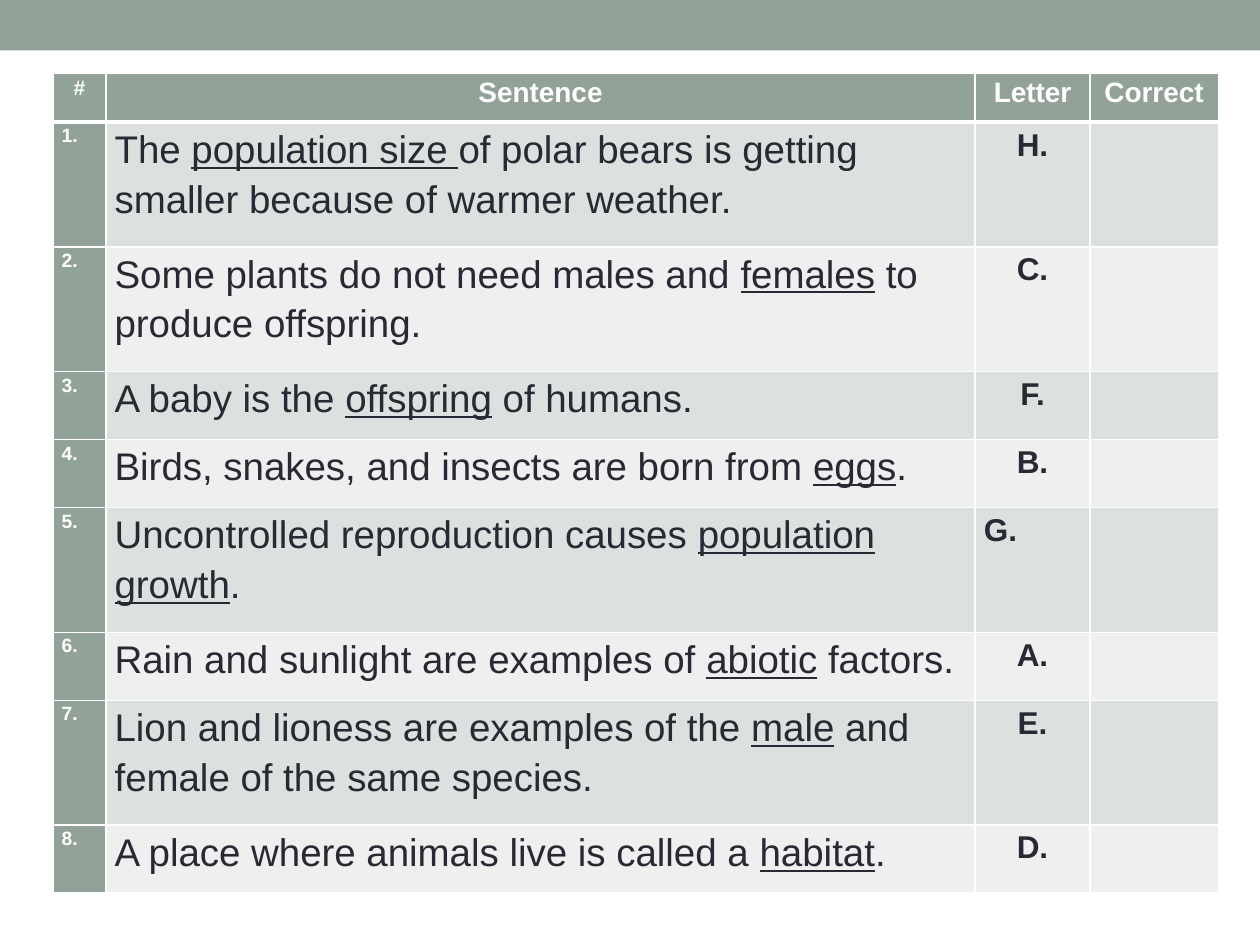
from lxml import etree
from pptx import Presentation
from pptx.dml.color import RGBColor
from pptx.enum.shapes import MSO_SHAPE
from pptx.enum.text import PP_ALIGN
from pptx.oxml.ns import qn
from pptx.util import Inches, Pt

RECTANGLE = MSO_SHAPE.RECTANGLE
LEFT, CENTER, JUSTIFY = PP_ALIGN.LEFT, PP_ALIGN.CENTER, PP_ALIGN.JUSTIFY

SAGE = RGBColor(0x93, 0xA2, 0x99)
BAND_DARK = RGBColor(0xDC, 0xE0, 0xDE)
BAND_LIGHT = RGBColor(0xEE, 0xF0, 0xEF)
INK = RGBColor(0x29, 0x29, 0x34)
WHITE = RGBColor(0xFF, 0xFF, 0xFF)
FONT = "Arial"

HEADINGS = [("#", 12), ("Sentence", 16), ("Letter", 16), ("Correct", 16)]
COLUMN_WIDTHS = [0.42, 6.9, 0.91, 1.02]
HEADER_HEIGHT = 0.39
ONE_LINE, TWO_LINES = 0.54, 0.99

# Text before the key term, key term, text after it, answer letter, row height
SENTENCES = [
    ("The ", "population size ", "of polar bears is getting smaller because of warmer weather.",
     "H.", TWO_LINES),
    ("Some plants do not need males and ", "females", " to produce offspring.", "C.", TWO_LINES),
    ("A baby is the ", "offspring", " of humans.", "F.", ONE_LINE),
    ("Birds, snakes, and insects are born from ", "eggs", ".", "B.", ONE_LINE),
    ("Uncontrolled reproduction causes ", "population growth", ".", "G.", TWO_LINES),
    ("Rain and sunlight are examples of ", "abiotic", " factors.", "A.", ONE_LINE),
    ("Lion and lioness are examples of the ", "male", " and female of the same species.",
     "E.", TWO_LINES),
    ("A place where animals live is called a ", "habitat", ".", "D.", ONE_LINE),
]


def add_banner(page, left, top, width, height):
    banner = page.shapes.add_shape(RECTANGLE, left, top, width, height)
    banner.shadow.inherit = False
    banner.fill.solid()
    banner.fill.fore_color.rgb = SAGE
    banner.line.fill.background()


def style_cell(cell, fill, top=1, bottom=1):
    """Set margins, white borders (widths in points) and fill."""
    cell.margin_left = cell.margin_right = Inches(0.07)
    cell.margin_top = cell.margin_bottom = 0
    properties = cell._tc.get_or_add_tcPr()
    for tag, width in (("a:lnL", 1), ("a:lnR", 1), ("a:lnT", top), ("a:lnB", bottom)):
        line = etree.SubElement(properties, qn(tag), w=str(Pt(width)))
        solid = etree.SubElement(line, qn("a:solidFill"))
        etree.SubElement(solid, qn("a:srgbClr"), val=str(WHITE))
    cell.fill.solid()
    cell.fill.fore_color.rgb = fill


def write_cell(cell, texts, size, color, align, bold=True):
    """Write the texts as runs; every second one is underlined."""
    para = cell.text_frame.paragraphs[0]
    para.alignment = align
    para.line_spacing = 1.15
    para.space_before = para.space_after = Pt(6)
    for index, text in enumerate(texts):
        span = para.add_run()
        span.text = text
        span.font.name = FONT
        span.font.size = Pt(size)
        span.font.bold = bold
        span.font.underline = index % 2 == 1
        span.font.color.rgb = color


def add_answer_table(page, left, top, width, height):
    frame = page.shapes.add_table(len(SENTENCES) + 1, len(HEADINGS), left, top, width, height)
    table = frame.table
    table.horz_banding = False
    for column, column_width in zip(table.columns, COLUMN_WIDTHS):
        column.width = Inches(column_width)

    table.rows[0].height = Inches(HEADER_HEIGHT)
    for cell, (heading, size) in zip(table.rows[0].cells, HEADINGS):
        style_cell(cell, SAGE, bottom=3)
        write_cell(cell, [heading], size, WHITE, CENTER)

    for number, (before, term, after, letter, row_height) in enumerate(SENTENCES, start=1):
        row = table.rows[number]
        row.height = Inches(row_height)
        band = BAND_DARK if number % 2 else BAND_LIGHT
        for index, cell in enumerate(row.cells):
            style_cell(cell, band if index else SAGE, top=3 if number == 1 else 1)
        number_cell, sentence_cell, letter_cell, _ = row.cells
        write_cell(number_cell, [f"{number}."], 11, WHITE, JUSTIFY)
        write_cell(sentence_cell, [before, term, after], 22, INK, LEFT, bold=False)
        write_cell(letter_cell, [letter], 18, INK, LEFT if letter == "G." else CENTER)


def main():
    deck = Presentation()
    deck.slide_width, deck.slide_height = Inches(10), Inches(7.5)
    page = deck.slides.add_slide(deck.slide_layouts[6])
    add_banner(page, 0, 0, deck.slide_width, Inches(0.4))
    add_answer_table(page, Inches(0.42), Inches(0.58), Inches(9.25), Inches(6.5))
    deck.save("out.pptx")


if __name__ == "__main__":
    main()
